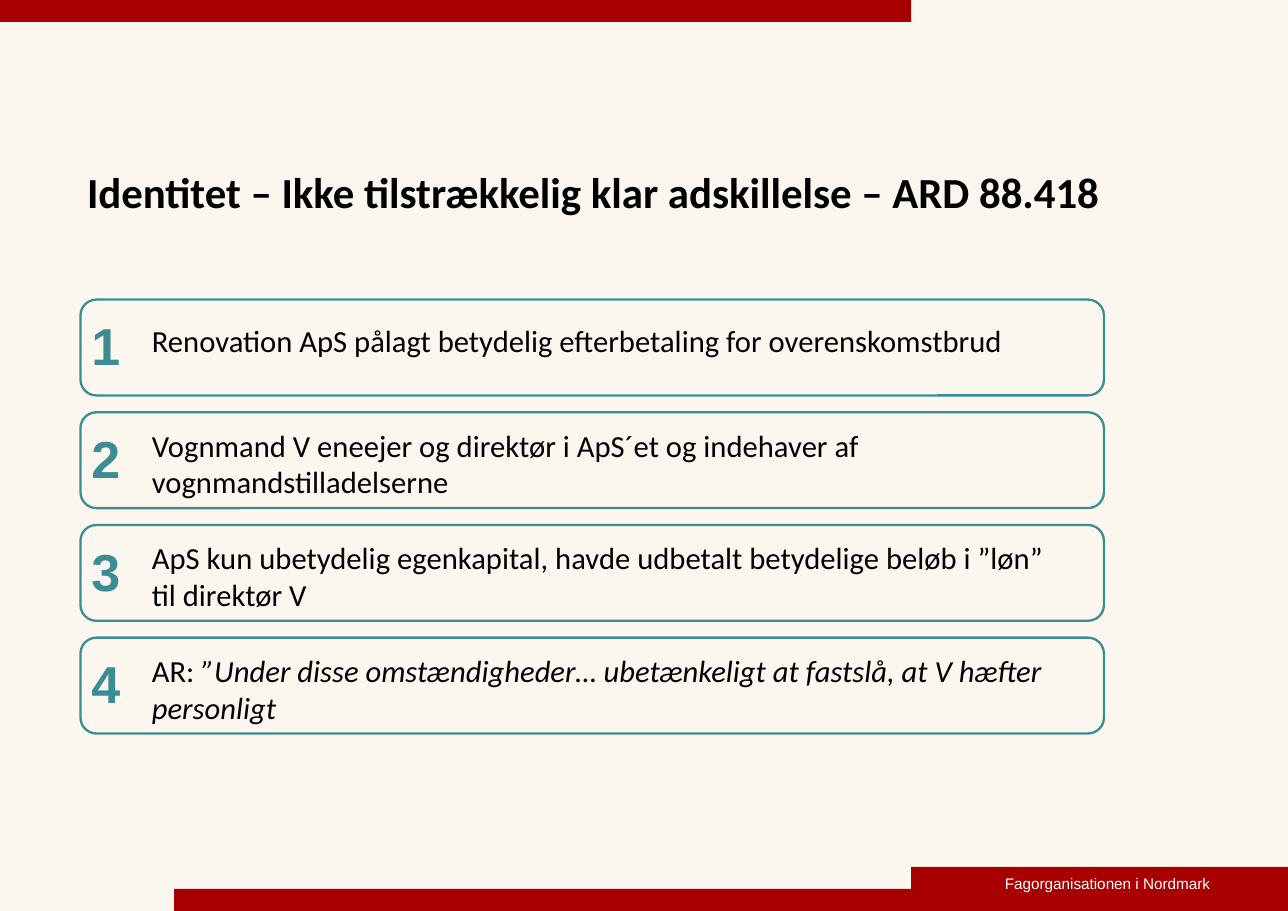
import pptx
import pptx.dml.color
import pptx.enum.shapes
import pptx.enum.text
import pptx.util

Inches = pptx.util.Inches
Shapes = pptx.enum.shapes.MSO_SHAPE
Anchor = pptx.enum.text.MSO_ANCHOR

CREAM, RED, TEAL, BLACK, WHITE = "FBF7EF", "A80000", "3C8C93", "000000", "FFFFFF"

TITLE = "Identitet – Ikke tilstrækkelig klar adskillelse – ARD 88.418"
FOOTER = "Fagorganisationen i Nordmark"
BARS = [  # left, top, width, height
    (0, 0, 8.27, 0.2),
    (1.58, 8.07, 10.11, 0.2),
    (8.27, 7.87, 3.42, 0.4),
]
# Each point: text top within its card, text height, spans of (text, italic)
POINTS = [
    (0.15, 0.44, [("Renovation ApS pålagt betydelig efterbetaling for overenskomstbrud", False)]),
    (0.08, 0.77, [("Vognmand V eneejer og direktør i ApS´et og indehaver af vognmandstilladelserne", False)]),
    (0.08, 0.77, [("ApS kun ubetydelig egenkapital, havde udbetalt betydelige beløb i ”løn” til direktør V", False)]),
    (0.08, 0.77, [("AR: ", False),
                  ("”Under disse omstændigheder… ubetænkeligt at fastslå, at V hæfter personligt", True)]),
]
CARD_LEFT, CARD_TOP, CARD_WIDTH, CARD_HEIGHT = 0.73, 2.72, 9.29, 0.87
CARD_PITCH = 1.023


def color(hex_code):
    return pptx.dml.color.RGBColor.from_string(hex_code)


def add_block(slide, kind, area, fill=None, line=None):
    block = slide.shapes.add_shape(kind, *map(Inches, area))
    block.shadow.inherit = False
    if fill:
        block.fill.solid()
        block.fill.fore_color.rgb = color(fill)
    else:
        block.fill.background()
    if line:
        block.line.color.rgb = color(line)
        block.line.width = pptx.util.Pt(1.5)
    else:
        block.line.fill.background()


def add_text(slide, area, spans, size, font, ink, bold=False, inset=True, anchor=Anchor.TOP):
    box = slide.shapes.add_textbox(*map(Inches, area))
    frame = box.text_frame
    frame.word_wrap = True
    frame.vertical_anchor = anchor
    if not inset:
        frame.margin_left = frame.margin_right = frame.margin_top = frame.margin_bottom = 0
    for text, italic in spans:
        span = frame.paragraphs[0].add_run()
        span.text = text
        span.font.size = pptx.util.Pt(size)
        span.font.name = font
        span.font.bold = bold
        span.font.italic = italic
        span.font.color.rgb = color(ink)


def main():
    deck = pptx.Presentation()
    deck.slide_width, deck.slide_height = Inches(11.69), Inches(8.27)
    slide = deck.slides.add_slide(deck.slide_layouts[6])
    slide.background.fill.solid()
    slide.background.fill.fore_color.rgb = color(CREAM)

    for bar in BARS:
        add_block(slide, Shapes.RECTANGLE, bar, fill=RED)
    add_text(slide, (9.12, 7.94, 2.15, 0.17), [(FOOTER, False)], 10, "Arial", WHITE, inset=False)
    add_text(slide, (0.79, 1.18, 10.23, 0.79), [(TITLE, False)], 28, "Calibri", BLACK,
             bold=True, inset=False, anchor=Anchor.BOTTOM)

    for index, (offset, height, spans) in enumerate(POINTS):
        top = CARD_TOP + index * CARD_PITCH
        add_block(slide, Shapes.ROUNDED_RECTANGLE,
                  (CARD_LEFT, top, CARD_WIDTH, CARD_HEIGHT), line=TEAL)
        add_text(slide, (1.28, top + offset, 8.35, height), spans, 20, "Calibri", BLACK)
        add_text(slide, (CARD_LEFT, top + 0.08, 0.39, 0.67), [(str(index + 1), False)],
                 34, "Arial", TEAL, bold=True)

    deck.save("out.pptx")


if __name__ == "__main__":
    main()
